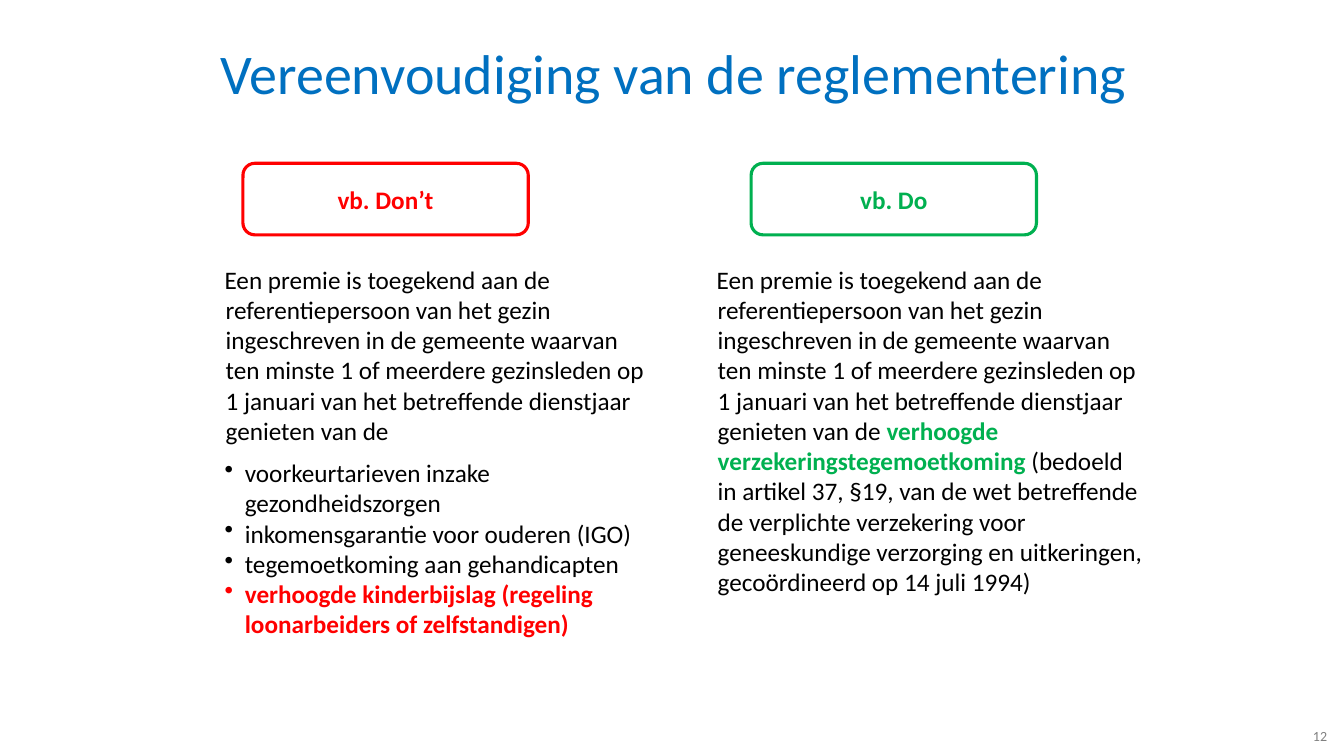
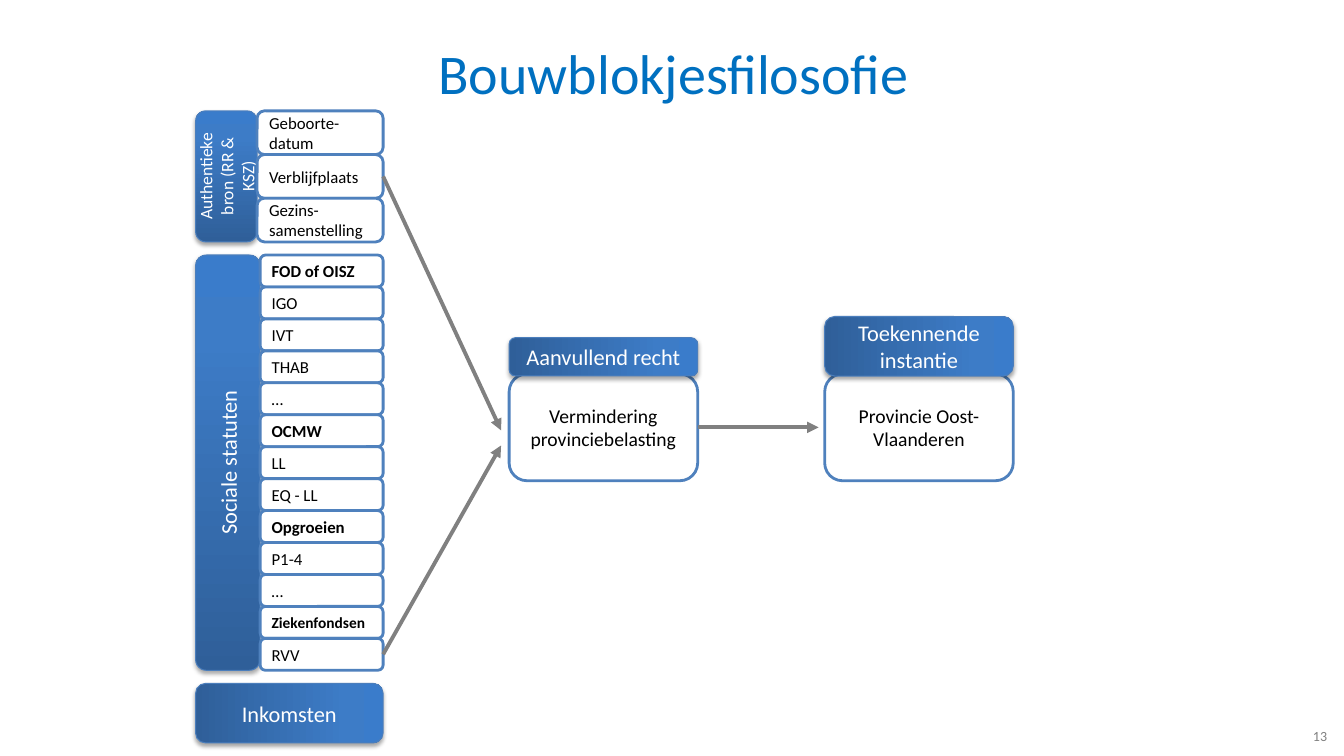
from lxml.etree import SubElement
from pptx import Presentation
from pptx.dml.color import RGBColor
from pptx.enum.shapes import MSO_CONNECTOR, MSO_SHAPE
from pptx.enum.text import MSO_ANCHOR, PP_ALIGN
from pptx.oxml.ns import qn
from pptx.util import Inches, Pt

COLORS = {
    "title": "0070C0", "text": "000000", "white": "FFFFFF", "grey": "808080",
    "dont": "FF0000", "do": "00B050", "border": "4F81BD", "bar_line": "4B7EBC",
}
BAR_STOPS = [(0, "2F5F99"), (80, "3D7CC7"), (100, "3A7CCB")]
FONT = "Calibri"
BLANK = 6


def rgb(name):
    return RGBColor.from_string(COLORS[name])


def add_xml(parent, tag, **attrs):
    return SubElement(parent, qn(tag), {k: str(v) for k, v in attrs.items()})


def add_run(p, text, color="text", **fmt):
    r = p.add_run()
    r.text = text
    for name, value in {"name": FONT, **fmt}.items():
        setattr(r.font, name, value)
    r.font.color.rgb = rgb(color)


def set_frame(sp, anchor=MSO_ANCHOR.MIDDLE):
    tf = sp.text_frame
    for name, value in {"word_wrap": True, "vertical_anchor": anchor}.items():
        setattr(tf, name, value)
    return tf


def add_text(s, box, anchor=MSO_ANCHOR.MIDDLE):
    return set_frame(s.shapes.add_textbox(*map(Inches, box)), anchor)


def add_label(tf, text, align, color="text", **fmt):
    p = tf.paragraphs[0]
    p.alignment = align
    add_run(p, text, color, **fmt)


def add_box(s, box, text, size, align=PP_ALIGN.CENTER, line="border",
            width=2, color="text", bold=False):
    """White rounded box with a coloured outline."""
    sp = s.shapes.add_shape(MSO_SHAPE.ROUNDED_RECTANGLE, *map(Inches, box))
    sp.shadow.inherit = False
    sp.fill.solid()
    sp.fill.fore_color.rgb = rgb("white")
    sp.line.color.rgb = rgb(line)
    sp.line.width = Pt(width)
    add_label(set_frame(sp), text, align, color, size=Pt(size), bold=bold)
    return sp


def add_bar(s, box, text, size=16, vertical=False):
    """Blue gradient bar with a soft shadow; a vertical one reads upwards."""
    sp = add_box(s, box, text, size, line="bar_line", width=0.75, color="white")
    sp.fill.gradient()
    sp.fill.gradient_angle = 90 if vertical else 0
    stops = sp._element.spPr.find(qn("a:gradFill")).find(qn("a:gsLst"))
    stops.clear()
    for pos, color in BAR_STOPS:
        add_xml(add_xml(stops, "a:gs", pos=pos * 1000), "a:srgbClr", val=color)
    effects = sp._element.spPr.find(qn("a:effectLst"))
    shadow = add_xml(effects, "a:outerShdw", blurRad=Pt(3.1), dist=Pt(1.8),
                     dir=5400000, rotWithShape=0)
    add_xml(add_xml(shadow, "a:srgbClr", val=COLORS["text"]), "a:alpha", val=35000)
    if vertical:
        sp.text_frame._txBody.bodyPr.set("vert", "vert270")


def add_arrow(s, start, end):
    """Arrow from the right side of a box to a free point."""
    cn = s.shapes.add_connector(MSO_CONNECTOR.STRAIGHT, 0, 0, *map(Inches, end))
    cn.begin_connect(start, 3)
    cn.line.color.rgb = rgb("grey")
    cn.line.width = Pt(2.75)
    add_xml(cn.line._get_or_add_ln(), "a:tailEnd", type="triangle")
    add_xml(cn._element.spPr, "a:effectLst")


def add_slide(prs, title, number):
    s = prs.slides.add_slide(prs.slide_layouts[BLANK])
    add_label(add_text(s, (0.68, 0.21, 12, 1.01)), title, PP_ALIGN.CENTER,
              "title", size=Pt(40))
    add_label(add_text(s, (12.17, 7.1, 1.09, 0.4)), str(number), PP_ALIGN.RIGHT,
              "grey", size=Pt(10))
    return s


def set_indent(p, left, first, bullet=False):
    pPr = p._p.get_or_add_pPr()
    pPr.set("marL", str(Inches(left)))
    pPr.set("indent", str(Inches(first)))
    if bullet:
        add_xml(pPr, "a:buChar", char="•")


def add_example(s, box, heading_x, heading, color, intro, bullets=()):
    """Outlined heading with a paragraph and optional bullets below it."""
    add_box(s, (heading_x, 1.62, 2.83, 0.71), heading, 18, line=color,
            width=2.25, color=color, bold=True)
    tf = add_text(s, box, MSO_ANCHOR.TOP)
    p = tf.paragraphs[0]
    set_indent(p, 0.2, -0.01)
    for text, marked in intro:
        add_run(p, text, color if marked else "text", size=Pt(18), bold=marked)
    for i, (text, marked) in enumerate(bullets):
        p = tf.add_paragraph()
        set_indent(p, 0.39, -0.2, bullet=True)
        if i == 0:
            p.space_before = Pt(8.5)
        add_run(p, text, color if marked else "text", size=Pt(18), bold=marked)


def add_stack(s, box, bar_w, label, label_size, rows):
    """Vertical bar with equal rows to its right; returns the rows."""
    x, y, w, h = box
    add_bar(s, (x, y, bar_w, h), label, label_size, vertical=True)
    row_h = h / len(rows)
    return [add_box(s, (x + bar_w, y + i * row_h, w - bar_w, row_h), text, size,
                    PP_ALIGN.LEFT, bold=bold)
            for i, (text, size, bold) in enumerate(rows)]


def add_card(s, box, bar_h, heading, text):
    """Box with a heading bar resting on its top edge."""
    x, y, w, h = box
    sp = add_box(s, box, text, 14)
    add_bar(s, (x, y + 0.02 - bar_h, w, bar_h), heading)
    return sp


def build_rules(prs):
    s = add_slide(prs, "Vereenvoudiging van de reglementering", 12)
    intro = ("Een premie is toegekend aan de referentiepersoon van het gezin "
             "ingeschreven in de gemeente waarvan ten minste 1 of meerdere "
             "gezinsleden op 1 januari van het betreffende dienstjaar genieten van de")
    add_example(s, (1.94, 2.57, 4.57, 3.85), 2.41, "vb. Don’t", "dont",
                [(intro, False)], [
        ("voorkeurtarieven inzake gezondheidszorgen", False),
        ("inkomensgarantie voor ouderen (IGO)", False),
        ("tegemoetkoming aan gehandicapten", False),
        ("verhoogde kinderbijslag (regeling loonarbeiders of zelfstandigen)", True),
    ])
    add_example(s, (6.82, 2.57, 4.65, 3.9), 7.45, "vb. Do", "do", [
        (intro + " ", False),
        ("verhoogde verzekeringstegemoetkoming ", True),
        ("(bedoeld in artikel 37, §19, van de wet betreffende de verplichte "
         "verzekering voor geneeskundige verzorging en uitkeringen, "
         "gecoördineerd op 14 juli 1994)", False),
    ])


def build_blocks(prs):
    s = add_slide(prs, "Bouwblokjesfilosofie", 13)
    # Data sources on the left
    sources = ["Geboorte-datum", "Verblijfplaats", "Gezins-samenstelling"]
    source_rows = add_stack(s, (1.94, 1.1, 1.86, 1.3), 0.61,
                            "Authentieke bron (RR & KSZ)", 12.5,
                            [(text, 12, False) for text in sources])
    statuses = ["FOD of OISZ", "IGO", "IVT", "THAB", "…", "OCMW", "LL", "EQ - LL",
                "Opgroeien", "P1-4", "…", "Ziekenfondsen", "RVV"]
    headings = {"FOD of OISZ": 12, "OCMW": 12, "Opgroeien": 12, "Ziekenfondsen": 11}
    status_rows = add_stack(s, (1.94, 2.53, 1.86, 4.12), 0.64,
                            "Sociale statuten", 16,
                            [(text, headings.get(text, 12), text in headings)
                             for text in statuses])
    add_bar(s, (1.94, 6.78, 1.86, 0.59), "Inkomsten")
    # Right and granting body
    right = add_card(s, (5.05, 3.71, 1.87, 1.06), 0.38, "Aanvullend recht",
                     "Vermindering provinciebelasting")
    add_card(s, (8.18, 3.71, 1.87, 1.06), 0.59, "Toekennende instantie",
             "Provincie Oost-Vlaanderen")
    # Flow
    add_arrow(s, source_rows[1], (4.97, 4.27))
    add_arrow(s, status_rows[-1], (4.97, 4.42))
    add_arrow(s, right, (8.12, 4.24))


def main():
    prs = Presentation()
    prs.slide_width, prs.slide_height = Inches(13.33), Inches(7.5)
    build_rules(prs)
    build_blocks(prs)
    prs.save("out.pptx")


if __name__ == "__main__":
    main()
